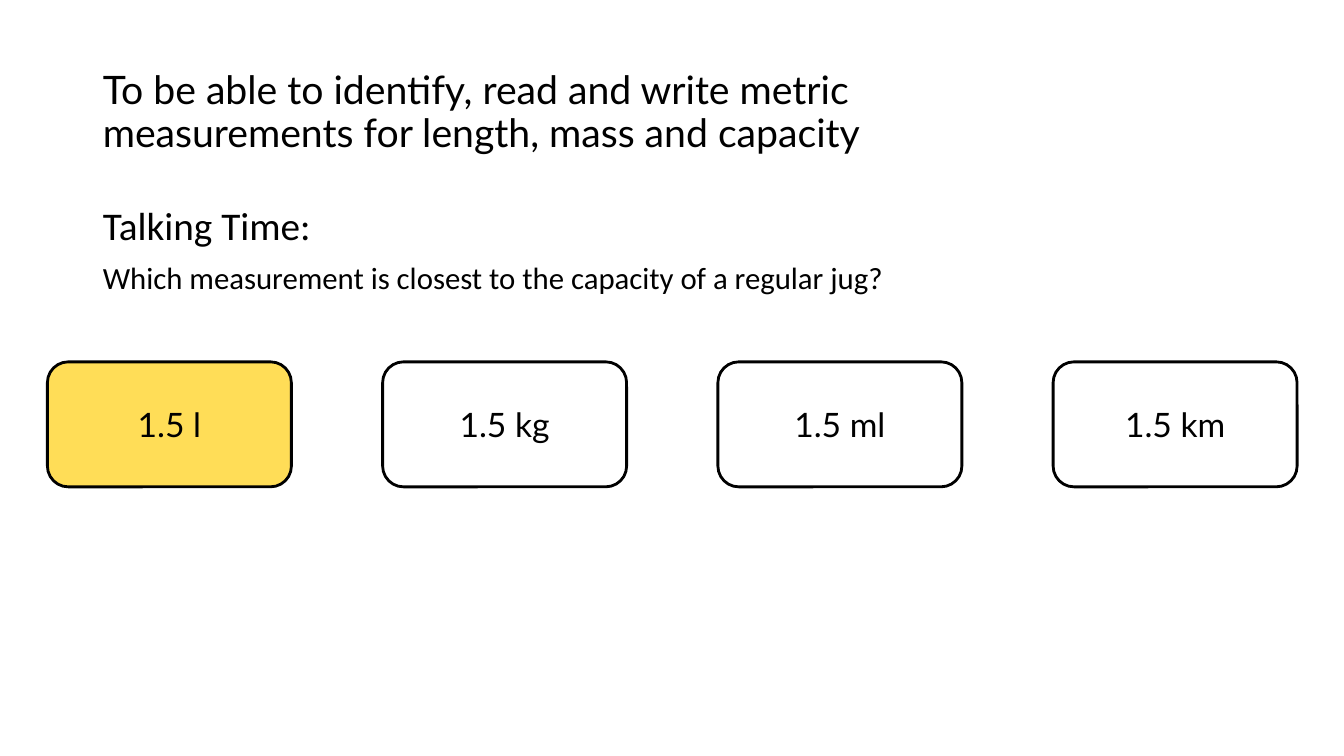
from pptx import Presentation
from pptx.dml.color import RGBColor
from pptx.enum.shapes import MSO_SHAPE
from pptx.enum.text import MSO_ANCHOR, MSO_AUTO_SIZE, PP_ALIGN
from pptx.oxml.xmlchemy import OxmlElement
from pptx.util import Inches, Pt

COLORS = {"text": "000000", "line": "000000", "plain": "FFFFFF", "answer": "FFDD57"}


def rgb(name):
    return RGBColor.from_string(COLORS[name])


class SlideBuilder:
    """Holds the style and the current slide."""

    heading_font = "Lato"
    body_font = "Calibri"

    def __init__(self, prs):
        self.slide = prs.slides.add_slide(prs.slide_layouts[1])
        self.slide.background.fill.solid()
        self.slide.background.fill.fore_color.rgb = rgb("plain")

    def place(self, sp, left, top, width, height, anchor):
        sp.left, sp.top = Inches(left), Inches(top)
        sp.width, sp.height = Inches(width), Inches(height)
        tf = sp.text_frame
        tf.word_wrap = True
        tf.auto_size = MSO_AUTO_SIZE.NONE
        tf.vertical_anchor = anchor
        return tf

    def style(self, p, font, size, align=PP_ALIGN.LEFT):
        p.alignment = align
        for r in p.runs:
            r.font.name = font
            r.font.size = Pt(size)
            r.font.color.rgb = rgb("text")

    def title(self, text, *box):
        tf = self.place(self.slide.shapes.title, *box, MSO_ANCHOR.MIDDLE)
        tf.text = text
        p = tf.paragraphs[0]
        p.line_spacing = 0.9
        self.style(p, self.heading_font, 28)

    def body(self, lines, *box):
        tf = self.place(self.slide.placeholders[1], *box, MSO_ANCHOR.TOP)
        for i, (text, size) in enumerate(lines):
            p = tf.paragraphs[0] if i == 0 else tf.add_paragraph()
            p.text = text
            pPr = p._p.get_or_add_pPr()
            pPr.set("marL", "0")
            pPr.set("indent", "0")
            pPr.append(OxmlElement("a:buNone"))
            p.line_spacing = 0.9
            p.space_before = Pt(10 if i else 0)
            self.style(p, self.body_font, size)

    def card(self, text, fill, left, top, width, height):
        sp = self.slide.shapes.add_shape(
            MSO_SHAPE.ROUNDED_RECTANGLE,
            Inches(left), Inches(top), Inches(width), Inches(height))
        sp.shadow.inherit = False
        sp.fill.solid()
        sp.fill.fore_color.rgb = rgb(fill)
        sp.line.color.rgb = rgb("line")
        sp.line.width = Pt(2)
        tf = sp.text_frame
        tf.word_wrap = True
        tf.vertical_anchor = MSO_ANCHOR.MIDDLE
        tf.text = text
        self.style(tf.paragraphs[0], self.heading_font, 24, PP_ALIGN.CENTER)


def main():
    prs = Presentation()
    prs.slide_width, prs.slide_height = Inches(13.33), Inches(7.5)
    s = SlideBuilder(prs)

    # Learning objective
    s.title("To be able to identify, read and write metric measurements "
            "for length, mass and capacity", 0.92, 0.4, 9.6, 1.45)

    # Question
    s.body([("Talking Time:", 28),
            ("Which measurement is closest to the capacity of a regular jug?", 22)],
           0.92, 2, 11.5, 4.76)

    # Answer cards, with the correct one highlighted
    answer = "1.5 l"
    pitch = 3.325
    for i, text in enumerate([answer, "1.5 kg", "1.5 ml", "1.5 km"]):
        fill = "answer" if text == answer else "plain"
        s.card(text, fill, 0.47 + i * pitch, 3.59, 2.42, 1.24)

    prs.save("out.pptx")


if __name__ == "__main__":
    main()
